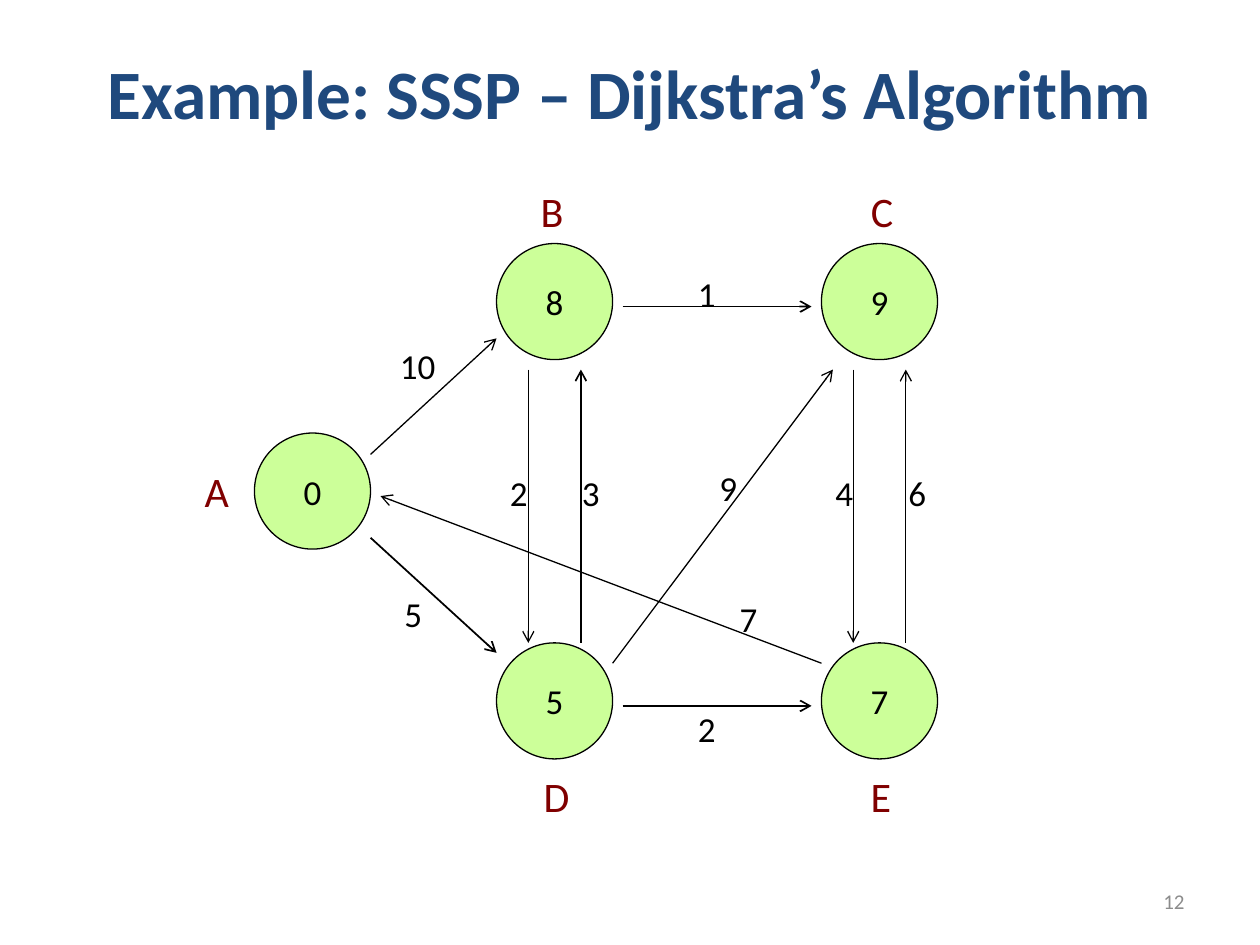
import pptx
import pptx.util
import pptx.dml.color
import pptx.enum.shapes
import pptx.enum.text
import pptx.oxml
import pptx.oxml.ns

Cm, Pt = pptx.util.Cm, pptx.util.Pt
ALIGN = pptx.enum.text.PP_ALIGN
COLORS = {"title": "1F497D", "node": "CCFF99", "ink": "000000",
          "name": "800000", "page": "8C8C8C"}


def tint(key):
    return pptx.dml.color.RGBColor.from_string(COLORS[key])


def write(shape, text, size, key, align=ALIGN.CENTER, wrap=True):
    frame = shape.text_frame
    frame.word_wrap = wrap
    frame.vertical_anchor = pptx.enum.text.MSO_ANCHOR.MIDDLE
    para = frame.paragraphs[0]
    para.text = text
    para.alignment = align
    para.font.name = "Calibri"
    para.font.size = Pt(size)
    para.font.color.rgb = tint(key)
    return para


deck = pptx.Presentation()
deck.slide_width, deck.slide_height = Cm(25.4), Cm(19.05)
slide = deck.slides.add_slide(deck.slide_layouts[6])
shapes = slide.shapes

# Title
box = shapes.add_textbox(Cm(1.27), Cm(0.43), Cm(22.86), Cm(2.84))
write(box, "Example: SSSP – Dijkstra’s Algorithm", 39.6, "title").font.bold = True

# Nodes: centre, distance, offset of the name from the centre
rad = 1.17
nodes = {
    "A": (6.3, 9.9, "0", -1.93, 0),
    "B": (11.18, 6.08, "8", -0.05, -1.84),
    "C": (17.73, 6.08, "9", 0.05, -1.84),
    "D": (11.18, 14.13, "5", 0.03, 1.92),
    "E": (17.73, 14.13, "7", 0.03, 1.92),
}
for name, (x, y, dist, dx, dy) in nodes.items():
    node = shapes.add_shape(pptx.enum.shapes.MSO_SHAPE.OVAL,
                            Cm(x - rad), Cm(y - rad), Cm(2 * rad), Cm(2 * rad))
    node.shadow.inherit = False
    node.fill.solid()
    node.fill.fore_color.rgb = tint("node")
    node.line.color.rgb = tint("ink")
    node.line.width = Pt(0.75)
    write(node, dist, 20, "ink")
    box = shapes.add_textbox(Cm(x + dx - 0.5), Cm(y + dy - 0.64), Cm(1), Cm(1.28))
    write(box, name, 24, "name", wrap=False)

# Edges: start node and offset, end node and offset, width, weight, label centre
gap = 1.37
edges = [
    ("A", rad, 0.94, "D", -rad, -0.97, 1, "5", 8.33, 12.37),
    ("A", rad, -0.74, "B", -rad, 0.74, 0.75, "10", 8.42, 7.37),
    ("D", gap, 0.1, "E", -gap, 0.1, 1, "2", 14.25, 14.69),
    ("B", gap, 0.1, "C", -gap, 0.1, 1, "1", 14.25, 5.91),
    ("D", rad, -0.76, "C", -0.94, gap, 0.75, "9", 14.68, 9.83),
    ("E", -rad, -0.76, "A", gap, 0.1, 0.75, "7", 15.09, 12.46),
    ("D", 0.53, -rad, "B", 0.53, gap, 1, "3", 11.91, 9.92),
    ("B", -0.53, gap, "D", -0.53, -rad, 0.75, "2", 10.46, 9.92),
    ("E", 0.53, -rad, "C", 0.53, gap, 0.75, "6", 18.49, 9.92),
    ("C", -0.53, gap, "E", -0.53, -rad, 0.75, "4", 17.02, 9.92),
]
space = pptx.oxml.ns.nsdecls("a")
for start, sx, sy, end, ex, ey, width, cost, x, y in edges:
    (ax, ay), (bx, by) = nodes[start][:2], nodes[end][:2]
    edge = shapes.add_connector(pptx.enum.shapes.MSO_CONNECTOR.STRAIGHT,
                                Cm(ax + sx), Cm(ay + sy), Cm(bx + ex), Cm(by + ey))
    edge.line.color.rgb = tint("ink")
    edge.line.width = Pt(width)
    props = edge._element.spPr
    props.find(pptx.oxml.ns.qn("a:ln")).append(
        pptx.oxml.parse_xml(f'<a:tailEnd {space} type="arrow"/>'))
    props.append(pptx.oxml.parse_xml(f"<a:effectLst {space}/>"))

    # Weight, in a box as wide as its digits need
    wide = 0.6 + 0.4 * len(cost)
    box = shapes.add_textbox(Cm(x - wide / 2), Cm(y - 0.56), Cm(wide), Cm(1.12))
    write(box, cost, 20, "ink", wrap=False)

# Page number
box = shapes.add_textbox(Cm(18.2), Cm(17.65), Cm(5.93), Cm(1.02))
write(box, "12", 12, "page", ALIGN.RIGHT)

deck.save("out.pptx")
